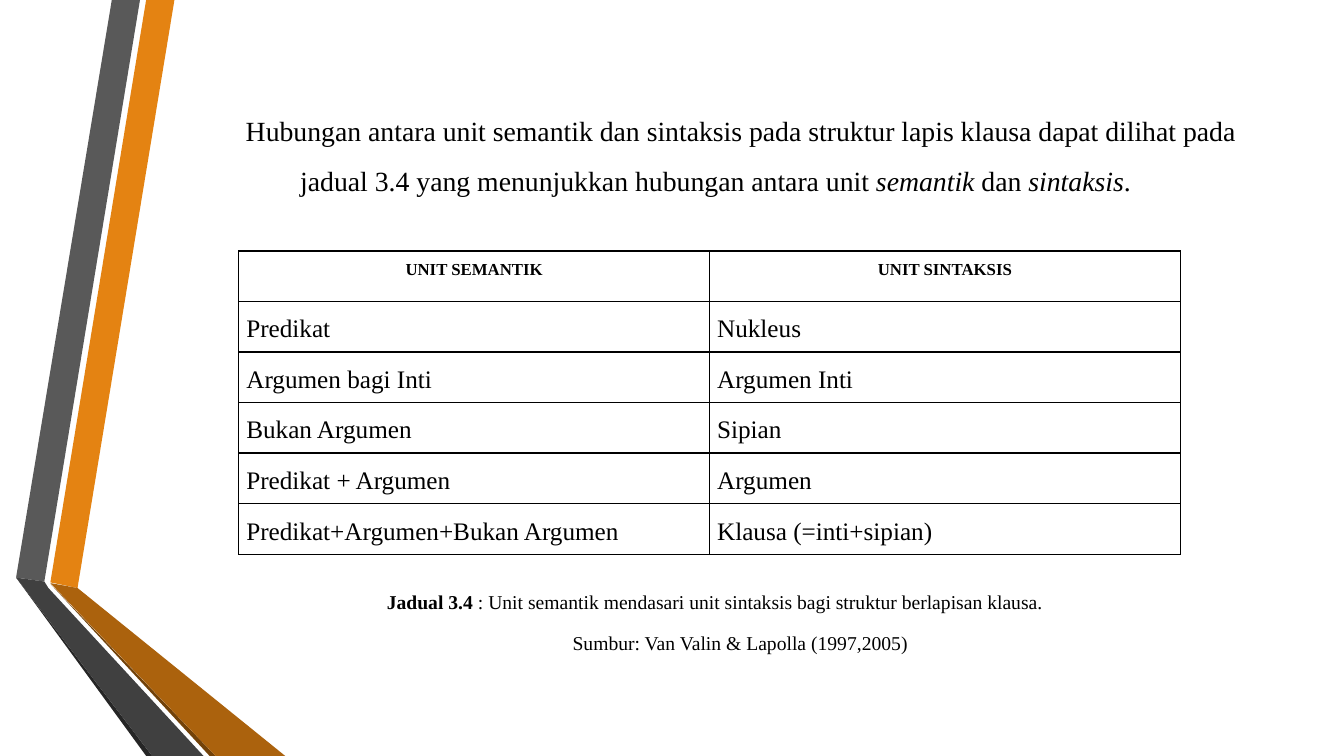
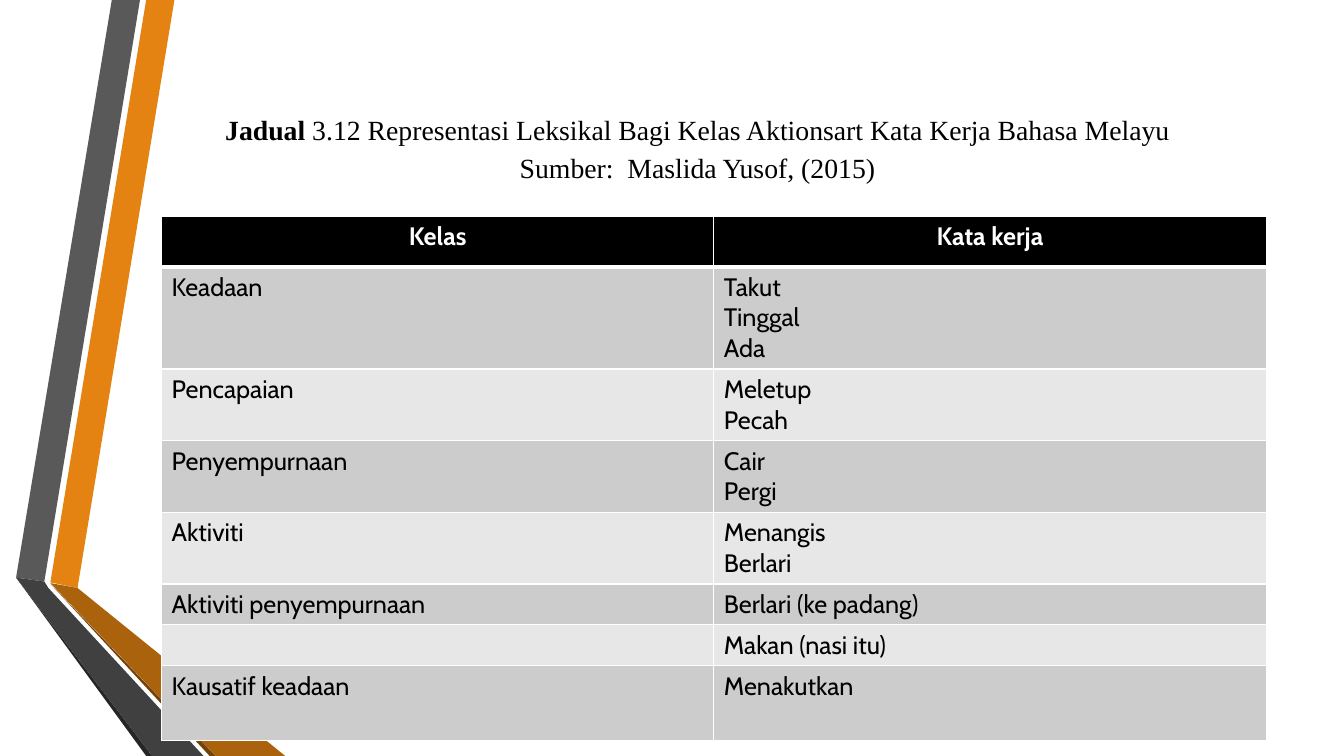
from lxml.etree import SubElement
from pptx import Presentation
from pptx.dml.color import RGBColor
from pptx.enum.text import MSO_ANCHOR, MSO_AUTO_SIZE, PP_ALIGN
from pptx.oxml.ns import qn
from pptx.util import Pt

BLACK = RGBColor(0x00, 0x00, 0x00)
WHITE = RGBColor(0xFF, 0xFF, 0xFF)
ORANGE = RGBColor(0xE4, 0x83, 0x12)
RUST = RGBColor(0xAB, 0x62, 0x0D)
BROWN = RGBColor(0x72, 0x42, 0x09)
GRAY = RGBColor(0x59, 0x59, 0x59)
DARK = RGBColor(0x40, 0x40, 0x40)
COAL = RGBColor(0x26, 0x26, 0x26)
SILVER = RGBColor(0xCC, 0xCC, 0xCC)
PALE = RGBColor(0xE7, 0xE7, 0xE7)

SERIF = "Times New Roman"
SANS = "Cabin"

BANDS = [
    (ORANGE, [(36, 416), (55.4, 420), (124.6, 0), (104.4, 0)]),
    (GRAY, [(100, 0), (79.9, 0), (11.5, 412.6), (31.7, 415.4)]),
    (COAL, [(11.5, 412.6), (104.4, 540), (108.7, 540)]),
    (BROWN, [(36, 417), (149.8, 540), (154.1, 540)]),
    (RUST, [(36, 416.5), (154.1, 540), (203.8, 540), (55.4, 420)]),
    (DARK, [(145.4, 540), (34.6, 420), (31.7, 415.4), (11.5, 412.6),
            (108.7, 540)]),
]

UNITS = [
    ("UNIT SEMANTIK", "UNIT SINTAKSIS"),
    ("Predikat", "Nukleus"),
    ("Argumen bagi Inti", "Argumen Inti"),
    ("Bukan Argumen", "Sipian"),
    ("Predikat + Argumen", "Argumen"),
    ("Predikat+Argumen+Bukan Argumen", "Klausa (=inti+sipian)"),
]

VERBS = [
    ("Kelas", ["Kata kerja"]),
    ("Keadaan", ["Takut", "Tinggal", "Ada"]),
    ("Pencapaian", ["Meletup", "Pecah"]),
    ("Penyempurnaan", ["Cair", "Pergi"]),
    ("Aktiviti", ["Menangis", "Berlari"]),
    ("Aktiviti penyempurnaan", ["Berlari (ke padang)"]),
    ("", ["Makan (nasi itu)"]),
    ("Kausatif keadaan", ["Menakutkan"]),
]


def add_bands(layout, slide):
    for num, (color, spots) in enumerate(BANDS):
        start, *rest = [(Pt(x), Pt(y)) for x, y in spots]
        pen = slide.shapes.build_freeform(*start, scale=1.0)
        pen.add_line_segments(rest, close=True)
        band = pen.convert_to_shape()
        band.shadow.inherit = False
        band.fill.solid()
        band.fill.fore_color.rgb = color
        band.line.fill.background()
        band.element.xpath(".//p:cNvPr")[0].set("id", str(100 + num))
        layout.shapes.element.append(band.element)


def add_run(para, text, size, font=SERIF, color=BLACK, bold=False,
            slant=False):
    run = para.add_run()
    run.text = text
    run.font.size = Pt(size)
    run.font.name = font
    run.font.color.rgb = color
    run.font.bold = bold
    run.font.italic = slant


def set_para(para, align, space=1.0, after=0, left=0, first=0):
    para.alignment = align
    para.line_spacing = space
    para.space_before = Pt(0)
    para.space_after = Pt(after)
    props = para._p.get_or_add_pPr()
    props.set("marL", str(Pt(left)))
    props.set("indent", str(Pt(first)))


def set_title(slide, left, top, height, space, first=0):
    title = slide.shapes.title
    title.left, title.top = Pt(left), Pt(top)
    title.width, title.height = Pt(789), Pt(height)
    frame = title.text_frame
    frame.word_wrap = True
    frame.auto_size = MSO_AUTO_SIZE.NONE
    frame.vertical_anchor = MSO_ANCHOR.MIDDLE
    para = frame.paragraphs[0]
    set_para(para, PP_ALIGN.CENTER, space, 10, first=first)
    return para


def set_edges(cell, color, top=1, bottom=1):
    props = cell._tc.get_or_add_tcPr()
    for side, width in (("L", 1), ("R", 1), ("T", top), ("B", bottom)):
        line = SubElement(props, qn(f"a:ln{side}"), w=str(Pt(width)))
        fill = SubElement(line, qn("a:solidFill"))
        SubElement(fill, qn("a:srgbClr"), val=str(color))


def add_grid(slide, left, top, width, highs):
    frame = slide.shapes.add_table(len(highs), 2, Pt(left), Pt(top),
                                   Pt(width), Pt(sum(highs)))
    grid = frame.table
    grid.horz_banding = False
    for col in grid.columns:
        col.width = Pt(width / 2)
    for row, high in zip(grid.rows, highs):
        row.height = Pt(high)
    return grid


def add_units(slide):
    grid = add_grid(slide, 170.6, 179.3, 672.6, [36.1] * len(UNITS))
    for r, row in enumerate(UNITS):
        head = r == 0
        for c, text in enumerate(row):
            cell = grid.cell(r, c)
            set_edges(cell, BLACK)
            cell.fill.background()
            cell.margin_left = cell.margin_right = Pt(5.4)
            cell.margin_top = cell.margin_bottom = 0
            para = cell.text_frame.paragraphs[0]
            set_para(para, PP_ALIGN.CENTER if head else PP_ALIGN.JUSTIFY,
                     1.5, 10)
            add_run(para, text, 12 if head else 18, bold=head)


def add_verbs(slide):
    highs = [29.2 + 21.9 * (len(words) - 1) for _, words in VERBS]
    highs[0], highs[-1] = 36, 53.3
    grid = add_grid(slide, 115.4, 154.5, 789, highs)
    for r, (kind, words) in enumerate(VERBS):
        head = r == 0
        fill = BLACK if head else SILVER if r % 2 else PALE
        for c, lines in enumerate(([kind], words)):
            cell = grid.cell(r, c)
            set_edges(cell, WHITE, 3 if r == 1 else 1, 3 if head else 1)
            cell.fill.solid()
            cell.fill.fore_color.rgb = fill
            frame = cell.text_frame
            for n, text in enumerate(lines):
                para = frame.add_paragraph() if n else frame.paragraphs[0]
                set_para(para, PP_ALIGN.CENTER if head else PP_ALIGN.LEFT)
                if text:
                    add_run(para, text, 18, SANS, WHITE if head else BLACK,
                            head)


def add_note(slide):
    box = slide.shapes.add_textbox(Pt(239.8), Pt(415.4), Pt(542), Pt(75.6))
    frame = box.text_frame
    frame.word_wrap = True
    para = frame.paragraphs[0]
    set_para(para, PP_ALIGN.CENTER, 1.15, 10)
    add_run(para, "Jadual 3.4", 14, bold=True)
    add_run(para, " : Unit semantik mendasari unit sintaksis bagi struktur "
                  "berlapisan klausa.", 14)
    para = frame.add_paragraph()
    set_para(para, PP_ALIGN.CENTER, 1.15, left=36)
    add_run(para, "Sumbur: Van Valin & Lapolla (1997,2005)", 14)


def fill_units(slide):
    para = set_title(slide, 116.6, 54, 102, 1.5, 36)
    add_run(para, "Hubungan antara unit semantik dan sintaksis pada struktur "
                  "lapis klausa dapat dilihat pada jadual 3.4 yang "
                  "menunjukkan hubungan antara unit ", 19.8)
    add_run(para, "semantik", 19.8, slant=True)
    add_run(para, " dan ", 19.8)
    add_run(para, "sintaksis", 19.8, slant=True)
    add_run(para, ".", 19.8)
    add_units(slide)
    add_note(slide)


def fill_verbs(slide):
    para = set_title(slide, 103.7, 72, 65, 1.15)
    add_run(para, "Jadual", 19.8, bold=True)
    add_run(para, " 3.12 Representasi Leksikal Bagi Kelas Aktionsart Kata "
                  "Kerja Bahasa Melayu", 19.8)
    para.add_line_break()
    add_run(para, "Sumber:  Maslida Yusof, (2015)", 19.8)
    add_verbs(slide)


def main():
    deck = Presentation()
    deck.slide_width, deck.slide_height = Pt(960), Pt(540)
    layout = deck.slide_layouts[5]
    first = deck.slides.add_slide(layout)
    add_bands(layout, first)
    fill_units(first)
    fill_verbs(deck.slides.add_slide(layout))
    deck.save("out.pptx")


if __name__ == "__main__":
    main()
